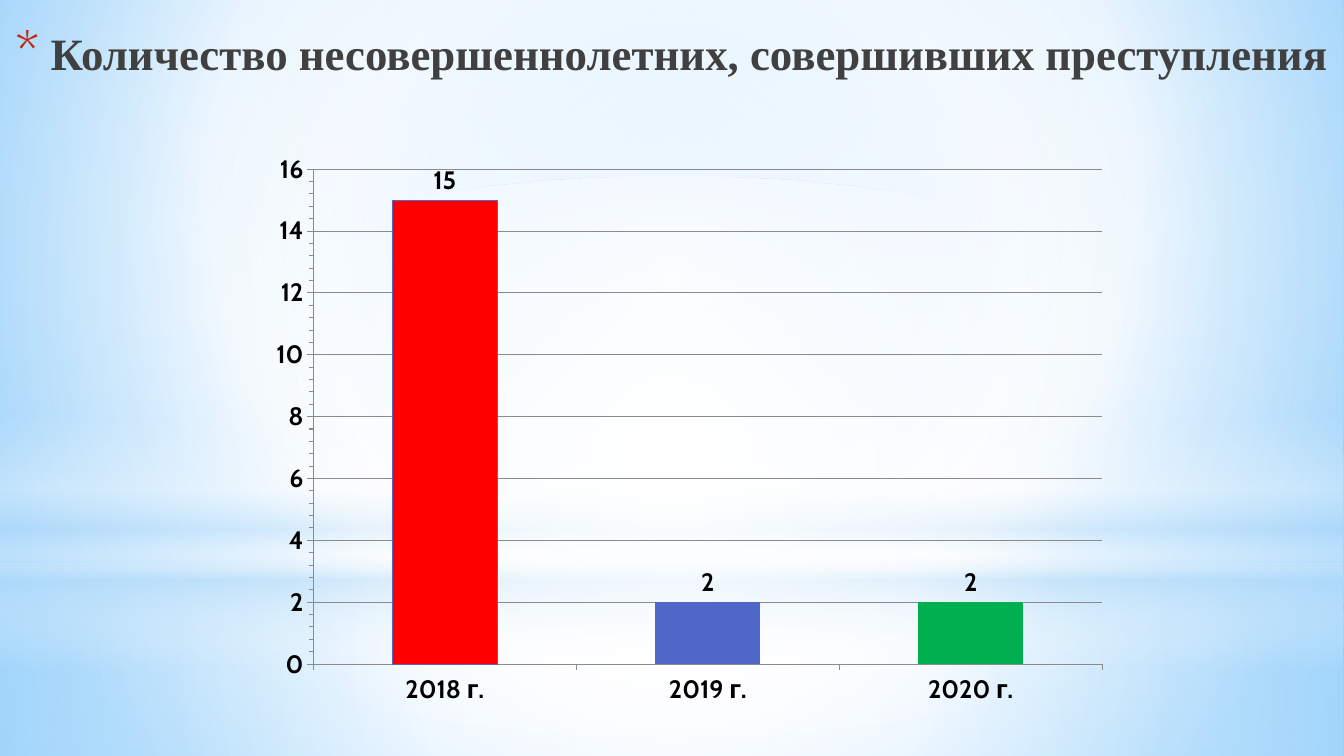
from lxml.etree import SubElement
from pptx import Presentation
from pptx.chart.data import CategoryChartData
from pptx.dml.color import RGBColor
from pptx.enum.chart import XL_CHART_TYPE, XL_LABEL_POSITION, XL_TICK_MARK
from pptx.enum.shapes import MSO_SHAPE
from pptx.enum.text import MSO_ANCHOR, PP_ALIGN
from pptx.oxml import parse_xml
from pptx.oxml.ns import nsdecls, qn
from pptx.util import Inches, Pt

BLACK = RGBColor(0x00, 0x00, 0x00)
DARK = RGBColor(0x40, 0x40, 0x40)
GRID = RGBColor(0x8B, 0x8B, 0x8B)
RED = RGBColor(0xFF, 0x00, 0x00)
BLUE = RGBColor(0x4E, 0x67, 0xC8)
GREEN = RGBColor(0x00, 0xB0, 0x50)
BULLET = RGBColor(0xC3, 0x26, 0x0C)
WHITE = RGBColor(0xFF, 0xFF, 0xFF)
PALE = RGBColor(0xB4, 0xDC, 0xFA)
SKY = RGBColor(0x9E, 0xD5, 0xFF)
DEEP_SKY = RGBColor(0x5B, 0xB9, 0xFF)


def gradient(stops, focus=None):
    """Radial around focus (left, top, right, bottom in %), else top to bottom."""
    gs = "".join(
        f'<a:gs pos="{pos * 1000}"><a:srgbClr val="{color}">'
        f'<a:alpha val="{alpha * 1000}"/></a:srgbClr></a:gs>'
        for pos, color, alpha in stops)
    if focus:
        sides = " ".join(f'{k}="{v * 1000}"' for k, v in zip("ltrb", focus))
        shade = f'<a:path path="circle"><a:fillToRect {sides}/></a:path>'
    else:
        shade = '<a:lin ang="5400000" scaled="0"/>'
    return parse_xml(f'<a:gradFill {nsdecls("a")} rotWithShape="1">'
                     f'<a:gsLst>{gs}</a:gsLst>{shade}</a:gradFill>')


class SlideBuilder:
    title_font = "Times New Roman"
    chart_font = "Cabin"
    center = (50, 50, 50, 50)

    def __init__(self, prs):
        self.s = prs.slides.add_slide(prs.slide_layouts[5])

    def background(self, stops, focus):
        self.s.background.fill.solid()
        solid = self.s.element.xpath(".//p:bgPr/a:solidFill")[0]
        solid.getparent().replace(solid, gradient(stops, focus))

    def panel(self, shape, top, height, stops, focus=None):
        sp = self.s.shapes.add_shape(
            shape, 0, Inches(top), Inches(13.33), Inches(height))
        sp.shadow.inherit = False
        sp.line.fill.background()
        sp.fill.background()
        spPr = sp.element.spPr
        spPr.replace(spPr.find(qn("a:noFill")), gradient(stops, focus))

    def title(self, text, left, top, width, height):
        sp = self.s.shapes.title
        self.s.shapes.element.append(sp.element)  # in front of the panels
        sp.left, sp.top = Inches(left), Inches(top)
        sp.width, sp.height = Inches(width), Inches(height)
        tf = sp.text_frame
        tf.text = text
        tf.word_wrap = True
        tf.vertical_anchor = MSO_ANCHOR.TOP
        p = tf.paragraphs[0]
        p.alignment = PP_ALIGN.CENTER
        p.line_spacing = 1.0
        p.font.name, p.font.size = self.title_font, Pt(32)
        p.font.bold = True
        p.font.color.rgb = DARK
        # Hanging asterisk bullet
        pPr = p.runs[0].font and p.runs[0]._r.getparent().get_or_add_pPr()
        pPr.set("marL", str(Inches(0.35)))
        pPr.set("indent", str(Inches(-0.35)))
        bullet = [
            f'<a:buClr {nsdecls("a")}><a:srgbClr val="{BULLET}"/></a:buClr>',
            f'<a:buSzPct {nsdecls("a")} val="128000"/>',
            f'<a:buFont {nsdecls("a")} typeface="{self.chart_font}"/>',
            f'<a:buChar {nsdecls("a")} char="*"/>']
        at = list(pPr).index(pPr.find(qn("a:defRPr")))
        for i, xml in enumerate(bullet):
            pPr.insert(at + i, parse_xml(xml))

    def column_chart(self, cats, vals, colors, left, top, width, height):
        data = CategoryChartData()
        data.categories = cats
        data.add_series("Series 1", vals)
        chart = self.s.shapes.add_chart(
            XL_CHART_TYPE.COLUMN_CLUSTERED, Inches(left), Inches(top),
            Inches(width), Inches(height), data).chart
        chart.has_title = False
        chart.has_legend = False
        chart.font.name, chart.font.size = self.chart_font, Pt(18)
        chart.font.color.rgb = BLACK

        # Axes
        for axis in (chart.category_axis, chart.value_axis):
            axis.major_tick_mark = XL_TICK_MARK.OUTSIDE
            axis.format.line.color.rgb = GRID
            self.bold_black(axis.tick_labels.font)
        axis = chart.value_axis
        axis.minor_tick_mark = XL_TICK_MARK.OUTSIDE
        axis.minimum_scale, axis.maximum_scale = 0, 16
        axis.major_unit, axis.minor_unit = 2, 0.4
        axis.has_major_gridlines = True
        axis.major_gridlines.format.line.color.rgb = GRID

        # Columns and labels
        plot = chart.plots[0]
        plot.gap_width = 150
        plot.vary_by_categories = False
        series = plot.series[0]
        series.format.fill.solid()
        series.format.fill.fore_color.rgb = BLUE
        for i, color in enumerate(colors):
            fmt = series.points[i].format
            fmt.fill.solid()
            fmt.fill.fore_color.rgb = color
        series.points[0].format.line.color.rgb = BLUE
        labels = series.data_labels
        labels.show_value = True
        labels.position = XL_LABEL_POSITION.OUTSIDE_END
        self.bold_black(labels.font)

        # Inner plot area
        area = chart.element.chart.plotArea
        for old in area.findall(qn("c:layout")):
            area.remove(old)
        layout = parse_xml(f'<c:layout {nsdecls("c")}/>')
        area.insert(0, layout)
        manual = SubElement(layout, qn("c:manualLayout"))
        for tag, val in (("layoutTarget", "inner"), ("xMode", "edge"),
                         ("yMode", "edge"), ("x", 0.072), ("y", 0.051),
                         ("w", 0.912), ("h", 0.866)):
            SubElement(manual, qn(f"c:{tag}")).set("val", str(val))

    def bold_black(self, font):
        font.name, font.size, font.bold = self.chart_font, Pt(18), True
        font.color.rgb = BLACK


def main():
    prs = Presentation()
    prs.slide_width, prs.slide_height = Inches(13.33), Inches(7.5)
    b = SlideBuilder(prs)

    # Backdrop
    b.background([(0, SKY, 100), (60, WHITE, 100), (100, DEEP_SKY, 100)],
                 (20, 10, 20, 60))
    b.panel(MSO_SHAPE.RECTANGLE, 5.58, 1.92,
            [(0, WHITE, 91), (37, WHITE, 76), (100, PALE, 79)], b.center)
    b.panel(MSO_SHAPE.RECTANGLE, 0, 5.58,
            [(0, WHITE, 89), (48, WHITE, 62), (100, PALE, 79)], b.center)
    b.panel(MSO_SHAPE.RECTANGLE, 4.12, 2.5,
            [(0, WHITE, 0), (29, WHITE, 30), (45, PALE, 40),
             (55, WHITE, 26), (65, PALE, 60), (100, WHITE, 0)])
    b.panel(MSO_SHAPE.OVAL, 1.75, 5.58,
            [(0, WHITE, 100), (56, WHITE, 0)], b.center)

    # Title and chart
    b.title("Количество несовершеннолетних, совершивших преступления",
            0, 0.21, 13.33, 1.25)
    b.column_chart(["2018 г.", "2019 г.", "2020 г."], [15, 2, 2],
                   [RED, BLUE, GREEN], 2.49, 1.39, 8.58, 5.67)
    prs.save("out.pptx")


if __name__ == "__main__":
    main()
